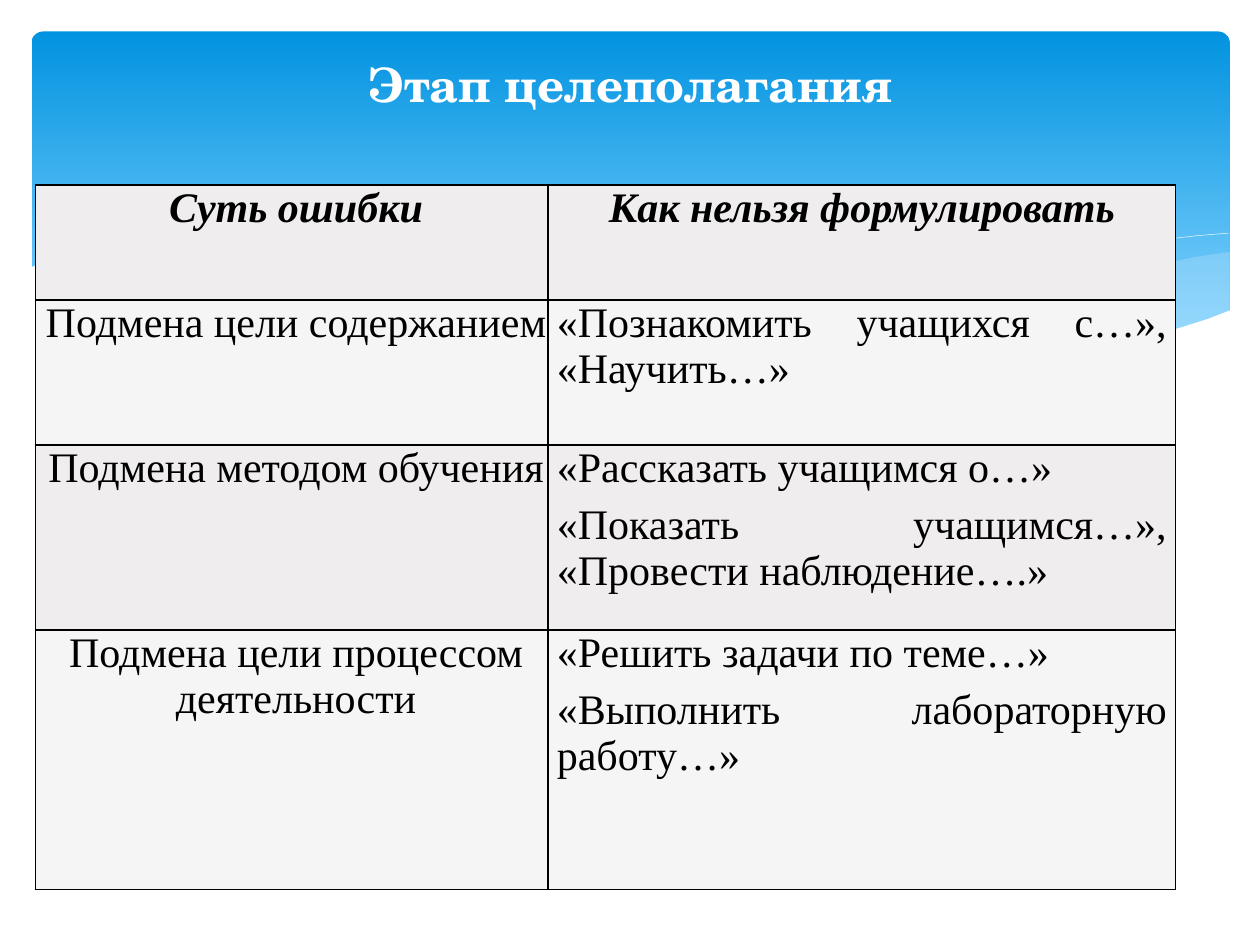
import pptx
import pptx.dml.color
import pptx.enum.shapes
import pptx.enum.text
import pptx.oxml
import pptx.oxml.ns
import pptx.util

Inches, Pt = pptx.util.Inches, pptx.util.Pt
ALIGN = pptx.enum.text.PP_ALIGN
WHITE, BLACK = "FFFFFF", "000000"
BAND_FILLS = ["EFEDED", "F5F5F5"]

RIGHT_SWELL = [
    (9.75, 2), (9.48, 2.04), (9.21, 2.1), (8.91, 2.16), (8.61, 2.23),
    (8.05, 2.37), (7.53, 2.48), (7.06, 2.57), (6.61, 2.65), (6.91, 2.69),
    (7.19, 2.72), (7.45, 2.75), (7.69, 2.77), (8.03, 2.78), (8.44, 2.77),
    (8.72, 2.74), (8.97, 2.7), (9.21, 2.65), (9.49, 2.57), (9.76, 2.47), (9.76, 2),
]
MIDDLE_SWELL = [
    (8.93, 2.73), (8.66, 2.69), (8.07, 2.6), (7.41, 2.47), (6.68, 2.31),
    (6.13, 2.18), (5.69, 2.08), (5.28, 2), (4.89, 1.94), (4.42, 1.89),
    (3.99, 1.86), (3.61, 1.85), (3.28, 1.87), (2.86, 1.91), (3.23, 1.96),
    (3.62, 2.03), (4.04, 2.11), (4.49, 2.22), (5.3, 2.4), (5.84, 2.52),
    (6.34, 2.61), (6.8, 2.68), (7.22, 2.74), (7.61, 2.77), (7.96, 2.78),
    (8.28, 2.78), (8.57, 2.77), (8.93, 2.73),
]
LONG_CREST = [
    (3.09, 1.95), (3.28, 1.92), (3.53, 1.89), (3.87, 1.87), (4.33, 1.87),
    (4.69, 1.89), (5.1, 1.92), (5.56, 1.97), (6.08, 2.04), (6.65, 2.13),
    (7.27, 2.26), (7.95, 2.41), (8.69, 2.61), (9.07, 2.72),
]
RIGHT_CREST = [
    (6.13, 2.57), (6.53, 2.46), (6.95, 2.35), (7.48, 2.23), (8.06, 2.1),
    (8.66, 1.99), (8.95, 1.94), (9.24, 1.9), (9.51, 1.87), (9.75, 1.85),
]
WHITE_FRONT = [
    (9.77, 2.46), (9.59, 2.53), (9.4, 2.59), (9.2, 2.65), (8.99, 2.69),
    (8.75, 2.73), (8.5, 2.75), (8.09, 2.77), (7.61, 2.75), (7.26, 2.72),
    (6.88, 2.68), (6.48, 2.62), (6.03, 2.54), (5.55, 2.45), (5.03, 2.33),
    (4.47, 2.2), (3.91, 2.07), (3.4, 1.97), (2.92, 1.9), (2.5, 1.86),
    (2.11, 1.84), (1.61, 1.84), (1.32, 1.86), (1.06, 1.89), (0.85, 1.93),
    (0.67, 1.97), (0.52, 2.01), (0.36, 2.07), (0.23, 2.13), (0.23, 3.29), (9.77, 3.29),
]
ERRORS = [
    (["Суть ошибки"], ["Как нельзя формулировать"]),
    (["Подмена цели содержанием"], ["«Познакомить учащихся с…», «Научить…»"]),
    (["Подмена методом обучения"],
     ["«Рассказать учащимся о…»", "«Показать учащимся…», «Провести наблюдение….»"]),
    (["Подмена цели процессом деятельности"],
     ["«Решить задачи по теме…»", "«Выполнить лабораторную работу…»"]),
]


def rgb(code):
    return pptx.dml.color.RGBColor.from_string(code)


class WaveSlide:
    title_font = {"name": "TeX Gyre Schola", "size": Pt(27), "bold": True, "italic": False}
    body_font = {"name": "Times New Roman", "size": Pt(24), "bold": False, "italic": False}
    header_font = {**body_font, "bold": True, "italic": True}

    def __init__(self, deck):
        self.slide = deck.slides.add_slide(deck.slide_layouts[5])

    def set_text(self, paragraph, text, color, align, font):
        paragraph.text = text
        paragraph.alignment = align
        paragraph.font.color.rgb = rgb(color)
        for name, value in font.items():
            setattr(paragraph.font, name, value)

    def banner(self, left, top, width, height):
        banner = self.slide.shapes.add_shape(
            pptx.enum.shapes.MSO_SHAPE.ROUNDED_RECTANGLE,
            Inches(left), Inches(top), Inches(width), Inches(height))
        banner.adjustments[0] = 0.034
        banner.shadow.inherit = False
        banner.line.fill.background()
        banner.fill.gradient()
        banner.fill.gradient_angle = 270
        stops = [(0, "0293E0"), (0.9, "83D3FE")]
        for stop, (position, color) in zip(banner.fill.gradient_stops, stops):
            stop.position = position
            stop.color.rgb = rgb(color)

    def outline(self, points, close):
        corners = [(Inches(x), Inches(y)) for x, y in points]
        builder = self.slide.shapes.build_freeform(*corners[0])
        builder.add_line_segments(corners[1:], close=close)
        wave = builder.convert_to_shape()
        wave.shadow.inherit = False
        return wave

    def swell(self, points, color, opacity=100):
        wave = self.outline(points, True)
        wave.line.fill.background()
        wave.fill.solid()
        wave.fill.fore_color.rgb = rgb(color)
        if opacity < 100:
            tint = wave.element.find(".//" + pptx.oxml.ns.qn("a:srgbClr"))
            tint.append(pptx.oxml.parse_xml(
                f'<a:alpha {pptx.oxml.ns.nsdecls("a")} val="{opacity * 1000}"/>'))

    def crest(self, points):
        wave = self.outline(points, False)
        wave.fill.background()
        wave.line.color.rgb = rgb(WHITE)
        wave.line.width = Pt(0.25)

    def title(self, text, left, top, width, height):
        title = self.slide.shapes.title
        title.left, title.top = Inches(left), Inches(top)
        title.width, title.height = Inches(width), Inches(height)
        title.text_frame.vertical_anchor = pptx.enum.text.MSO_ANCHOR.MIDDLE
        self.set_text(title.text_frame.paragraphs[0], text, WHITE, ALIGN.CENTER, self.title_font)
        title.element.getparent().append(title.element)  # in front of the waves

    def borders(self, cell):
        properties = cell._tc.get_or_add_tcPr()
        for place, side in enumerate("LRTB"):
            properties.insert(place, pptx.oxml.parse_xml(
                f'<a:ln{side} {pptx.oxml.ns.nsdecls("a")} w="{Pt(1)}"><a:solidFill>'
                f'<a:srgbClr val="{BLACK}"/></a:solidFill></a:ln{side}>'))

    def cell(self, cell, texts, fill, align, font, margin_right):
        cell.margin_left, cell.margin_right = Inches(0.07), Inches(margin_right)
        cell.margin_top = cell.margin_bottom = 0
        cell.fill.solid()
        cell.fill.fore_color.rgb = rgb(fill)
        self.borders(cell)
        for number, text in enumerate(texts):
            frame = cell.text_frame
            paragraph = frame.add_paragraph() if number else frame.paragraphs[0]
            self.set_text(paragraph, text, BLACK, align, font)
            paragraph.space_before = Pt(3 if number else 0)
            paragraph.space_after = Pt(3)

    def table(self, rows, left, top, widths, heights):
        table = self.slide.shapes.add_table(
            len(rows), len(widths), Inches(left), Inches(top),
            Inches(sum(widths)), Inches(sum(heights))).table
        table.first_row = table.horz_banding = False
        for column, width in zip(table.columns, widths):
            column.width = Inches(width)
        for r, (row, height) in enumerate(zip(rows, heights)):
            table.rows[r].height = Inches(height)
            for c, texts in enumerate(row):
                align = ALIGN.JUSTIFY if r and c else ALIGN.CENTER
                font = self.body_font if r else self.header_font
                self.cell(table.cell(r, c), texts, BAND_FILLS[r % 2], align, font, 0.07 * c)


def main():
    deck = pptx.Presentation()
    deck.slide_width, deck.slide_height = Inches(10), Inches(7.5)
    goals = WaveSlide(deck)
    goals.banner(0.25, 0.25, 9.51, 2.7)
    goals.swell(RIGHT_SWELL, "C6E7FC", 29)
    goals.swell(MIDDLE_SWELL, "C6E7FC", 40)
    goals.crest(LONG_CREST)
    goals.crest(RIGHT_CREST)
    goals.swell(WHITE_FRONT, WHITE)
    goals.title("Этап целеполагания", 0.5, 0.3, 9, 0.72)
    goals.table(ERRORS, 0.28, 1.47, [4.07, 4.98], [0.91, 1.15, 1.47, 2.06])
    deck.save("out.pptx")


if __name__ == "__main__":
    main()
